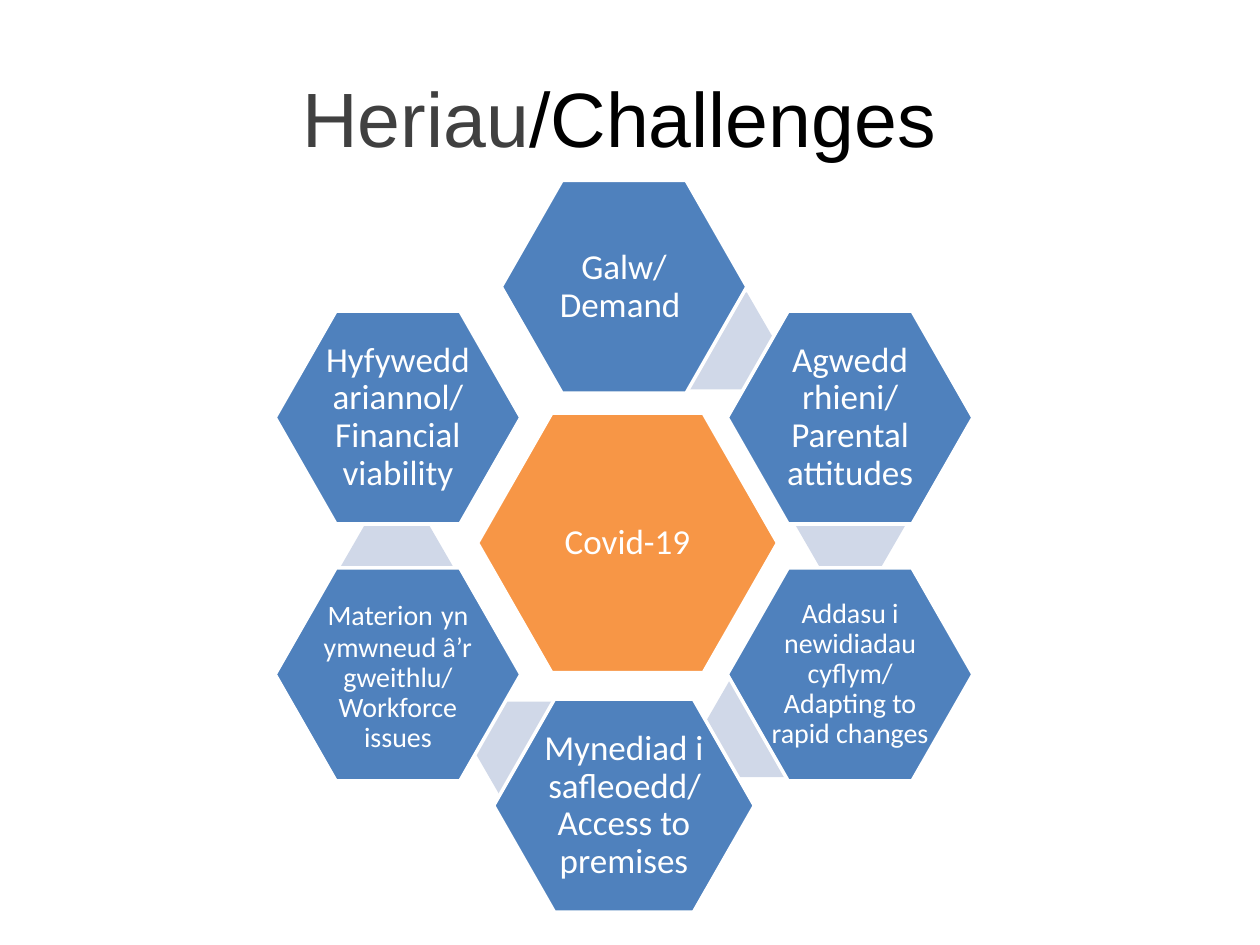
import pptx
import pptx.util
import pptx.dml.color
import pptx.enum.shapes
import pptx.enum.text

Pt = pptx.util.Pt

TITLE = [("Heriau", "404040"), ("/Challenges ", "000000")]
BLUE, ORANGE, PALE, WHITE = "4F81BD", "F79646", "D0D8E8", "FFFFFF"

RING_X, RING_Y = 356.6, 312
COLUMN, ROW = 129.2, 73.4
HEXAGON = (140.4, 121.7)
LINK = (64.8, 55.4)

# Text runs with sizes, offset from the ring centre, hexagon size;
# clockwise from the top
CHALLENGES = [
    ([("Galw/ Demand ", 20)], (0, -2 * ROW - 1.3), HEXAGON),
    ([("Agwedd rhieni/ Parental attitudes", 20)], (COLUMN, -ROW), HEXAGON),
    ([("Addasu i newidiadau cyflym/ Adapting to rapid changes", 16)],
     (COLUMN, ROW), HEXAGON),
    ([("Mynediad i safleoedd/Access to premises", 20)],
     (0, 2 * ROW + 1.6), (149, 121.7)),
    ([("Materion", 16), (" ", 20),
      ("yn ymwneud â’r gweithlu/ Workforce issues", 16)],
     (-COLUMN, ROW), HEXAGON),
    ([("Hyfywedd ariannol/ Financial viability", 20)],
     (-COLUMN, -ROW), HEXAGON),
]
CENTRE = ([("Covid-19", 20)], (2, -1.7), (171.4, 148.3))

# Pale links, each drawn just behind the challenge of the same position
LINK_OFFSETS = [None, (53.8, -117.2), (129.4, -13.6), (76.8, 104.5),
                (-53.5, 116.7), (-129.8, 12.3)]
# The first link lies behind the top hexagon, so links come one step early
LINKS = LINK_OFFSETS[1:] + [None]


def rgb(value):
    return pptx.dml.color.RGBColor.from_string(value)


def add_hexagon(slide, offset, size, fill, line=None, adjust=0.286):
    width, height = size
    hexagon = slide.shapes.add_shape(
        pptx.enum.shapes.MSO_SHAPE.HEXAGON,
        Pt(RING_X + offset[0] - width / 2),
        Pt(RING_Y + offset[1] - height / 2), Pt(width), Pt(height))
    hexagon.adjustments[0] = adjust
    hexagon.shadow.inherit = False
    hexagon.fill.solid()
    hexagon.fill.fore_color.rgb = rgb(fill)
    if line:
        hexagon.line.color.rgb = rgb(line)
        hexagon.line.width = Pt(2)
    else:
        hexagon.line.fill.background()
    return hexagon


def add_topic(slide, runs, offset, size, fill):
    frame = add_hexagon(slide, offset, size, fill, WHITE).text_frame
    frame.word_wrap = True
    frame.vertical_anchor = pptx.enum.text.MSO_ANCHOR.MIDDLE
    inset = Pt(runs[0][1] / 10)
    frame.margin_left = frame.margin_right = inset
    frame.margin_top = frame.margin_bottom = inset
    paragraph = frame.paragraphs[0]
    paragraph.alignment = pptx.enum.text.PP_ALIGN.CENTER
    paragraph.line_spacing = 0.9
    paragraph.font.name = "Calibri"
    paragraph.font.color.rgb = rgb(WHITE)
    for text, points in runs:
        run = paragraph.add_run()
        run.text = text
        run.font.size = Pt(points)


def add_title(slide):
    frame = slide.shapes.add_textbox(
        Pt(36), Pt(21.6), Pt(648), Pt(90)).text_frame
    frame.word_wrap = True
    frame.vertical_anchor = pptx.enum.text.MSO_ANCHOR.MIDDLE
    paragraph = frame.paragraphs[0]
    paragraph.alignment = pptx.enum.text.PP_ALIGN.CENTER
    paragraph.font.name = "Arial"
    paragraph.font.size = Pt(44)
    for text, color in TITLE:
        run = paragraph.add_run()
        run.text = text
        run.font.color.rgb = rgb(color)


def main():
    deck = pptx.Presentation()
    deck.slide_width, deck.slide_height = Pt(720), Pt(540)
    slide = deck.slides.add_slide(deck.slide_layouts[6])

    add_title(slide)

    # Centre, then the ring of challenges with their links
    add_topic(slide, *CENTRE, ORANGE)
    for challenge, link in zip(CHALLENGES, LINKS):
        if link:
            add_hexagon(slide, link, LINK, PALE, adjust=0.289)
        add_topic(slide, *challenge, BLUE)

    deck.save("out.pptx")


if __name__ == "__main__":
    main()
